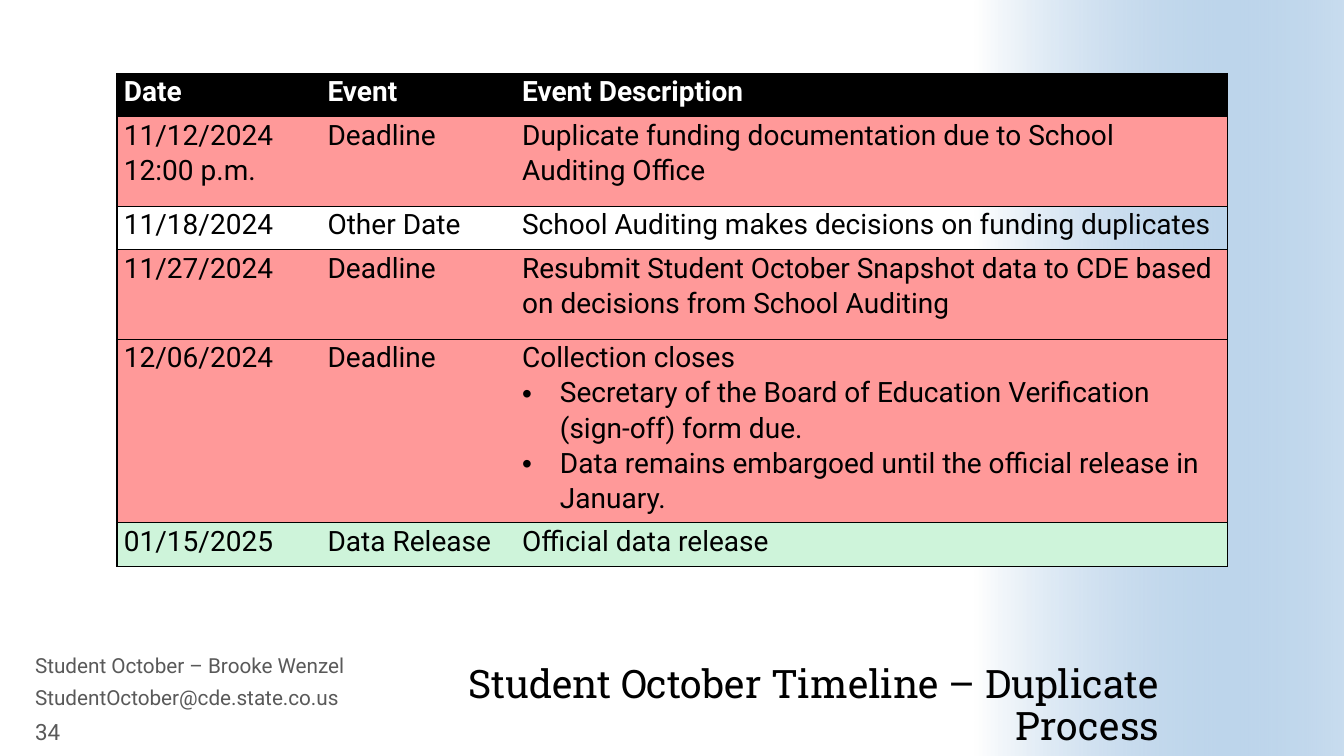
"""Build the Student October duplicate process timeline slide."""
from lxml import etree
from pptx import Presentation
from pptx.dml.color import RGBColor
from pptx.enum.shapes import MSO_SHAPE
from pptx.enum.text import MSO_ANCHOR, PP_ALIGN
from pptx.oxml.ns import qn
from pptx.util import Pt

RECTANGLE = MSO_SHAPE.RECTANGLE
TOP, MIDDLE, BOTTOM = MSO_ANCHOR.TOP, MSO_ANCHOR.MIDDLE, MSO_ANCHOR.BOTTOM
LEFT, RIGHT = PP_ALIGN.LEFT, PP_ALIGN.RIGHT

TITLE = "Student October Timeline – Duplicate Process"
CONTACTS = ["Student October – Brooke Wenzel", "StudentOctober@cde.state.co.us"]
PAGE_NUMBER = "34"
HEADINGS = ["Date", "Event", "Event Description"]
EVENTS = [
    (["11/12/2024", "12:00 p.m."], "Deadline",
     ["Duplicate funding documentation due to School Auditing Office"]),
    (["11/18/2024"], "Other Date",
     ["School Auditing makes decisions on funding duplicates"]),
    (["11/27/2024"], "Deadline",
     ["Resubmit Student October Snapshot data to CDE based on decisions from School Auditing"]),
    (["12/06/2024"], "Deadline",
     ["Collection closes",
      "• Secretary of the Board of Education Verification (sign-off) form due.",
      "• Data remains embargoed until the official release in January."]),
    (["01/15/2025"], "Data Release", ["Official data release"]),
]
COLUMN_WIDTHS = [145.5, 139, 509]
ROW_HEIGHTS = [31, 64, 31, 64, 131, 31]
BULLET = "• "

THEME = {
    "body_font": "Roboto", "title_font": "Roboto Slab",
    "title_size": 28, "table_size": 20, "contact_size": 14.8, "page_size": 16,
    "black": "000000", "white": "FFFFFF", "gray": "595959", "blue": "488BC9",
    "blue_opacity": 30,
    "events": {"Deadline": "FF9999", "Other Date": None, "Data Release": "CEF4DA"},
}
NO_TABLE_STYLE = "{2D5ABB26-0587-4C30-8999-92F81FD0307C}"


def rgb(color):
    return RGBColor.from_string(color)


def style(paragraph, font, size, color, spacing=1.0, bold=False, align=LEFT):
    paragraph.alignment = align
    paragraph.line_spacing = spacing
    paragraph.font.name = font
    paragraph.font.size = Pt(size)
    paragraph.font.bold = bold
    paragraph.font.color.rgb = rgb(color)


def add_text(slide, box, text, font, size, color, spacing, anchor=TOP, align=LEFT, inset=(7.2, 3.6)):
    frame = slide.shapes.add_textbox(*map(Pt, box)).text_frame
    frame.word_wrap = True
    frame.vertical_anchor = anchor
    frame.margin_left = frame.margin_right = Pt(inset[0])
    frame.margin_top = frame.margin_bottom = Pt(inset[1])
    frame.text = text
    style(frame.paragraphs[0], font, size, color, spacing, align=align)


def add_side_gradient(slide):
    band = slide.shapes.add_shape(RECTANGLE, Pt(558), Pt(138.25), Pt(540), Pt(263.5))
    band.rotation = 270
    band.shadow.inherit = False
    band.line.fill.background()
    band.fill.gradient()
    band.fill.gradient_angle = 270
    for stop, position, color in zip(band.fill.gradient_stops, (0, 1), ("white", "blue")):
        stop.position = position
        stop.color.rgb = rgb(THEME[color])
    blue = band.fill._xPr.findall(".//" + qn("a:srgbClr"))[1]
    etree.SubElement(blue, qn("a:alpha"), val=str(THEME["blue_opacity"] * 1000))


def add_borders(cell, sides):
    properties = cell._tc.get_or_add_tcPr()
    for index, side in enumerate(sides):
        line = etree.Element(qn("a:ln" + side), w=str(Pt(1)))
        solid = etree.SubElement(line, qn("a:solidFill"))
        etree.SubElement(solid, qn("a:srgbClr"), val=THEME["black"])
        properties.insert(index, line)


def fill_cell(cell, lines, fill, color, bold, sides):
    cell.margin_left = cell.margin_right = Pt(5)
    cell.margin_top = cell.margin_bottom = 0
    if fill:
        cell.fill.solid()
        cell.fill.fore_color.rgb = rgb(fill)
    else:
        cell.fill.background()
    add_borders(cell, sides)
    frame = cell.text_frame
    for index, line in enumerate(lines):
        paragraph = frame.add_paragraph() if index else frame.paragraphs[0]
        paragraph.text = line.removeprefix(BULLET)
        if line.startswith(BULLET):
            properties = paragraph._p.get_or_add_pPr()
            properties.set("marL", str(Pt(27)))
            properties.set("indent", str(-Pt(27)))
            etree.SubElement(properties, qn("a:buFont"), typeface="Arial")
            etree.SubElement(properties, qn("a:buChar"), char=BULLET.strip())
        style(paragraph, THEME["body_font"], THEME["table_size"], color, 1.07, bold)


def add_timeline(slide):
    rows = [([[heading] for heading in HEADINGS], THEME["black"], THEME["white"], True)]
    for dates, event, description in EVENTS:
        rows.append(([dates, [event], description], THEME["events"][event], THEME["black"], False))
    frame = slide.shapes.add_table(len(rows), len(HEADINGS), Pt(83.5), Pt(52.5),
                                   Pt(sum(COLUMN_WIDTHS)), Pt(sum(ROW_HEIGHTS)))
    timeline = frame.table
    timeline.first_row = timeline.horz_banding = False
    timeline._tbl.tblPr.find(qn("a:tableStyleId")).text = NO_TABLE_STYLE
    for column, width in zip(timeline.columns, COLUMN_WIDTHS):
        column.width = Pt(width)
    edges = ("LTB", "TB", "RTB")
    for row, height, (texts, fill, color, bold) in zip(timeline.rows, ROW_HEIGHTS, rows):
        row.height = Pt(height)
        for cell, lines, sides in zip(row.cells, texts, edges):
            fill_cell(cell, lines, fill, color, bold, sides)


def main():
    deck = Presentation()
    deck.slide_width, deck.slide_height = Pt(960), Pt(540)
    slide = deck.slides.add_slide(deck.slide_layouts[6])
    add_side_gradient(slide)
    add_text(slide, (306.7, 464.4, 521.3, 70.6), TITLE, THEME["title_font"], THEME["title_size"],
             THEME["black"], 0.9, BOTTOM, RIGHT, (0, 0))
    for index, contact in enumerate(CONTACTS):
        add_text(slide, (18, 466 + 23 * index, 280, 22.3), contact, THEME["body_font"],
                 THEME["contact_size"], THEME["gray"], 0.8)
    add_text(slide, (18, 511.2, 61.2, 22.3), PAGE_NUMBER, THEME["body_font"],
             THEME["page_size"], THEME["gray"], 1.0, MIDDLE)
    add_timeline(slide)
    deck.save("out.pptx")


if __name__ == "__main__":
    main()
